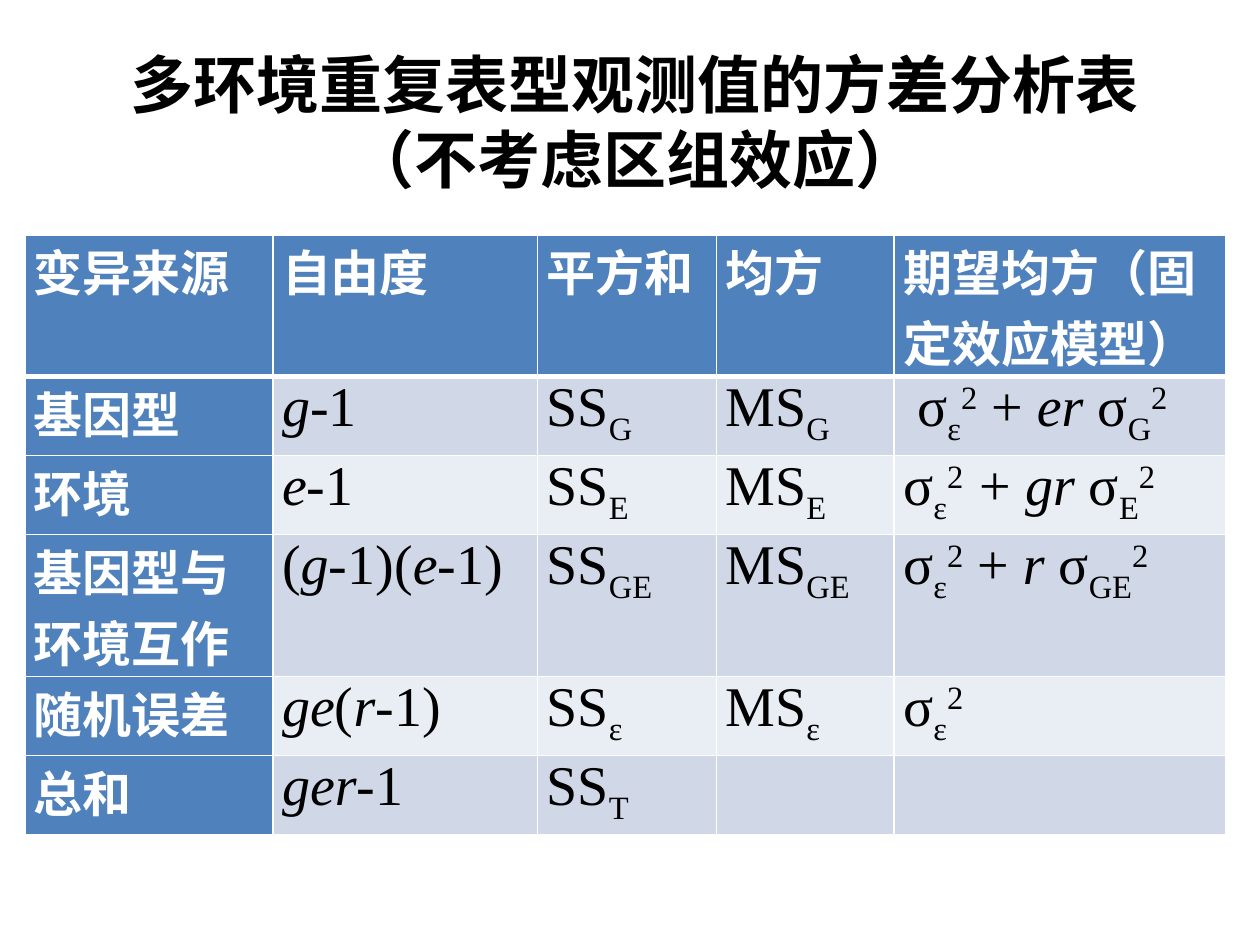
import itertools

import pptx
import pptx.dml.color
import pptx.enum.text
import pptx.oxml
import pptx.oxml.ns
import pptx.util

Pt = pptx.util.Pt

# In all texts: *italic*, _subscript_, ^superscript^
TITLE = "多环境重复表型观测值的方差分析表\n（不考虑区组效应）"
ROWS = [
    ["变异来源", "自由度", "平方和", "均方", "期望均方（固定效应模型）"],
    ["基因型", "*g*-1", "SS_G_", "MS_G_", " σ_ε_^2^ + *er *σ_G_^2^"],
    ["环境", "*e*-1", "SS_E_", "MS_E_", "σ_ε_^2  ^+ *gr *σ_E_^2^"],
    ["基因型与环境互作", "(*g*-1)(*e*-1)", "SS_GE_", "MS_GE_", "σ_ε_^2^ + *r *σ_GE_^2^"],
    ["随机误差", "*ge*(*r*-1)", "SS_ε_", "MS_ε_", "σ_ε_^2^"],
    ["总和", "*ger*-1", "SS_T_", "", ""],
]
COLUMN_WIDTHS = [141.8, 151.2, 102.2, 101.6, 189.4]
ONE_LINE, TWO_LINES = 45.2, 81
ROW_HEIGHTS = [TWO_LINES, ONE_LINE, ONE_LINE, TWO_LINES, ONE_LINE, ONE_LINE]
COLORS = {
    "black": "000000",
    "white": "FFFFFF",
    "header": "4F81BD",
    "dark band": "D0D8E8",
    "light band": "E9EDF4",
}
CJK_FONT = "Noto Sans CJK SC"
LATIN_FONT = "Times New Roman"
BASELINES = {"_": "-25000", "^": "30000"}


def color(name):
    return pptx.dml.color.RGBColor.from_string(COLORS[name])


def write(para, text, size, fill="black", bold=False, latin=LATIN_FONT):
    """Turn marked-up text into formatted runs."""
    active = set()
    for is_mark, group in itertools.groupby(text, lambda char: char in "*_^\n"):
        part = "".join(group)
        if is_mark:
            for mark in part:
                if mark == "\n":
                    para.add_line_break()
                else:
                    active ^= {mark}
            continue
        span = para.add_run()
        span.text = part
        font = span.font
        font.size, font.name, font.bold = Pt(size), latin, bold
        font.italic = "*" in active
        font.color.rgb = color(fill)
        properties = span._r.get_or_add_rPr()
        east_asian = pptx.oxml.parse_xml(
            f'<a:ea {pptx.oxml.ns.nsdecls("a")} typeface="{CJK_FONT}"/>')
        properties.find(pptx.oxml.ns.qn("a:latin")).addnext(east_asian)
        for mark in active & set(BASELINES):
            properties.set("baseline", BASELINES[mark])


def set_borders(cell, top, bottom):
    """Draw white borders, one point wide at the sides."""
    properties = cell._tc.get_or_add_tcPr()
    widths = {"lnL": 1, "lnR": 1, "lnT": top, "lnB": bottom}
    for place, (side, width) in enumerate(widths.items()):
        properties.insert(place, pptx.oxml.parse_xml(
            f'<a:{side} {pptx.oxml.ns.nsdecls("a")} w="{Pt(width)}"><a:solidFill>'
            f'<a:srgbClr val="{COLORS["white"]}"/></a:solidFill></a:{side}>'))


def add_title(page):
    box = page.shapes.add_textbox(Pt(48.2), Pt(20.9), Pt(629.3), Pt(96.5))
    frame = box.text_frame
    frame.word_wrap = True
    frame.vertical_anchor = pptx.enum.text.MSO_ANCHOR.MIDDLE
    para = frame.paragraphs[0]
    para.alignment = pptx.enum.text.PP_ALIGN.CENTER
    write(para, TITLE, size=36, bold=True, latin=CJK_FONT)


def add_variance_table(page):
    table = page.shapes.add_table(
        len(ROWS), len(COLUMN_WIDTHS), Pt(14.2), Pt(134.2),
        Pt(sum(COLUMN_WIDTHS)), Pt(sum(ROW_HEIGHTS))).table
    for column, width in zip(table.columns, COLUMN_WIDTHS):
        column.width = Pt(width)
    for row, height in zip(table.rows, ROW_HEIGHTS):
        row.height = Pt(height)
    for r, texts in enumerate(ROWS):
        for c, text in enumerate(texts):
            cell = table.cell(r, c)
            is_header = r == 0 or c == 0
            band = "dark band" if r % 2 else "light band"
            cell.fill.solid()
            cell.fill.fore_color.rgb = color("header" if is_header else band)
            cell.margin_left = cell.margin_right = Pt(5.2)
            cell.margin_top = cell.margin_bottom = 0
            set_borders(cell, top=3 if r == 1 else 1, bottom=3 if r == 0 else 1)
            write(cell.text_frame.paragraphs[0], text,
                  size=28 if is_header else 32,
                  fill="white" if is_header else "black", bold=is_header)


def main():
    deck = pptx.Presentation()
    deck.slide_width, deck.slide_height = Pt(720), Pt(540)
    page = deck.slides.add_slide(deck.slide_layouts[6])
    add_title(page)
    add_variance_table(page)
    deck.save("out.pptx")


if __name__ == "__main__":
    main()
